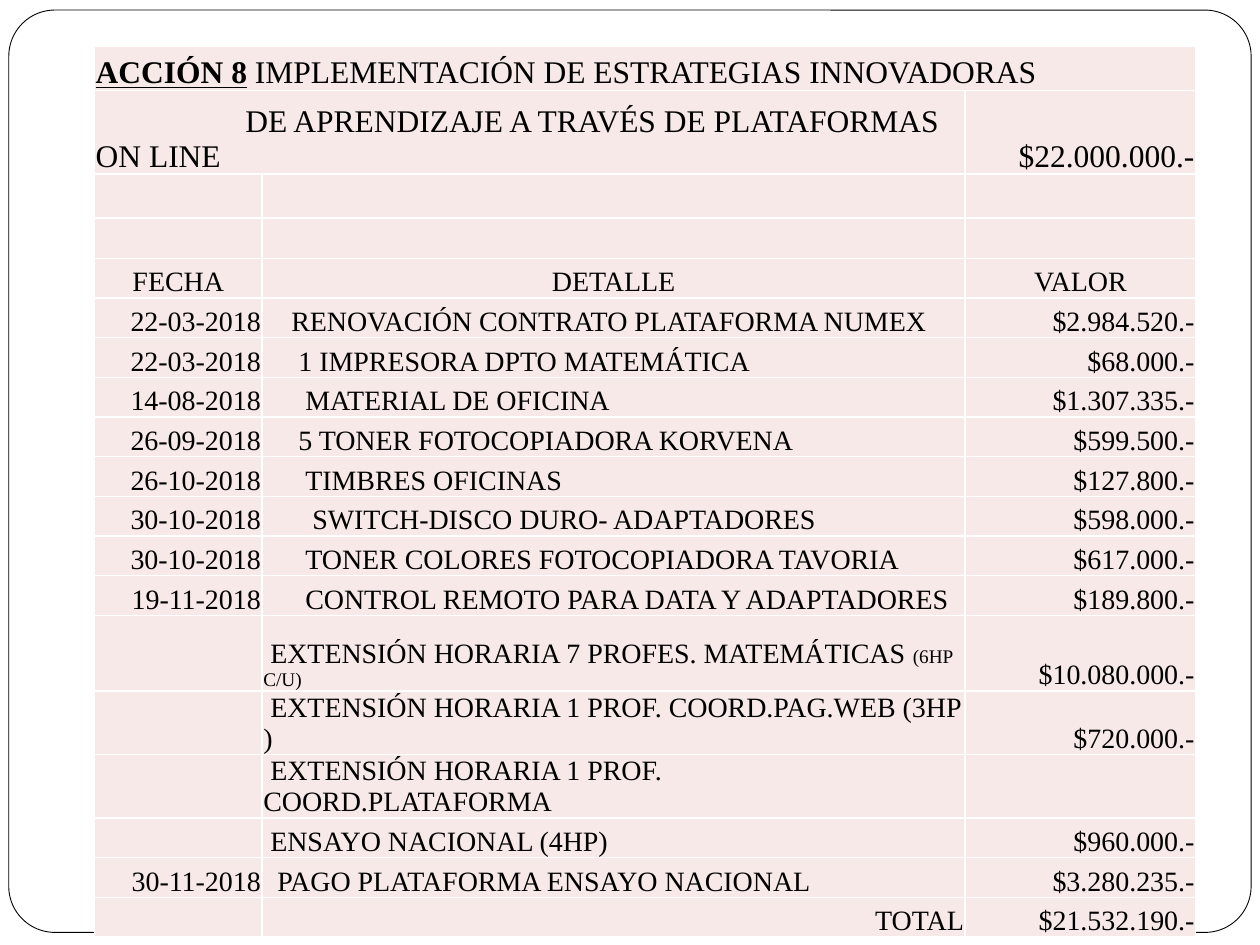
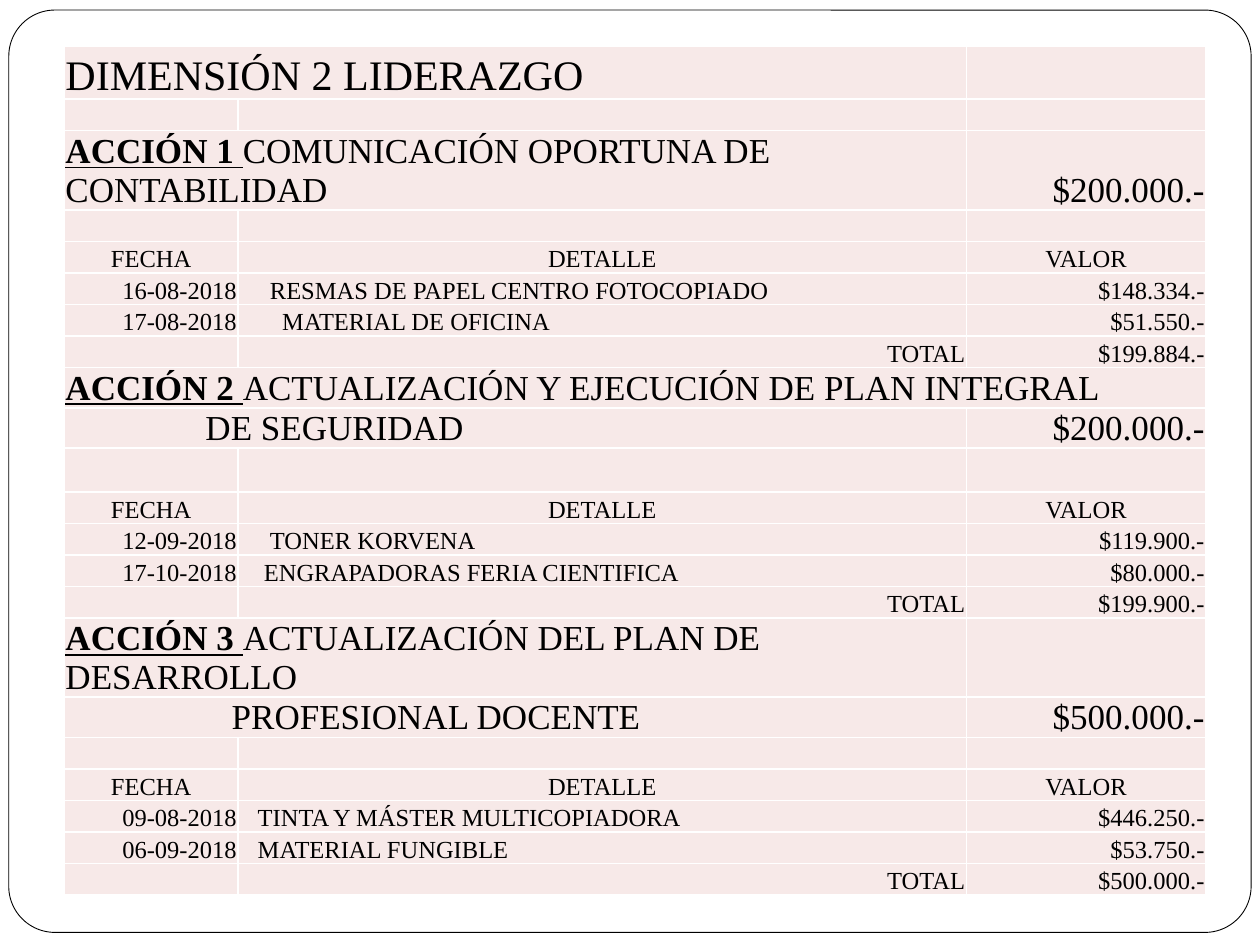
from lxml.etree import SubElement
from pptx import Presentation
from pptx.dml.color import RGBColor
from pptx.enum.shapes import MSO_SHAPE
from pptx.enum.text import MSO_ANCHOR, PP_ALIGN
from pptx.oxml.ns import qn
from pptx.util import Inches, Pt

COLORS = {"page": "FFFFFF", "cell": "F7E9E8", "ink": "000000", "grid": "FFFFFF"}
FONT = "Times New Roman"
ALIGN = {"l": PP_ALIGN.LEFT, "c": PP_ALIGN.CENTER, "r": PP_ALIGN.RIGHT}
CELL_FORMAT = {
    "margin_left": Inches(0.01),
    "margin_right": Inches(0.01),
    "margin_top": Inches(0.01),
    "margin_bottom": 0,
    "vertical_anchor": MSO_ANCHOR.BOTTOM,
}
ROW_KINDS = {
    "wide": {"aligns": "llr", "span": 3},
    "title": {"aligns": "llr", "span": 2},
    "head": {"aligns": "ccc", "span": 1},
    "item": {"aligns": "rlr", "span": 1},
    "total": {"aligns": "rrr", "span": 1},
}
ACTION_FORMAT = {"bold": True, "underline": True}
NOTE_FORMAT = {"size": Pt(11)}
HEAD = ("FECHA", "DETALLE", "VALOR")
BLANK = ("", "", "")


def rgb(name):
    return RGBColor.from_string(COLORS[name])


def write_cell(cell, text, size, align, lead, formats):
    for key, value in CELL_FORMAT.items():
        setattr(cell, key, value)
    cell.fill.solid()
    cell.fill.fore_color.rgb = rgb("cell")
    properties = cell._tc.get_or_add_tcPr()
    for place, side in enumerate(("lnL", "lnR", "lnT", "lnB")):
        border = properties.makeelement(qn(f"a:{side}"), {"w": str(Pt(1))})
        SubElement(SubElement(border, qn("a:solidFill")), qn("a:srgbClr"), val=COLORS["grid"])
        properties.insert(place, border)
    paragraph = cell.text_frame.paragraphs[0]
    paragraph.alignment = ALIGN[align]
    if lead:
        indent = paragraph._p.get_or_add_pPr()
        indent.set("marL", "0")
        indent.set("indent", str(Inches(lead * size / 288)))
    if not text:
        SubElement(paragraph._p, qn("a:endParaRPr"), sz=str(size * 100))
        return
    for part, extra in zip(text.split("|"), formats):
        for number, line in enumerate(part.split("\n")):
            if number:
                paragraph.add_line_break()
            run = paragraph.add_run()
            run.text = line
            run.font.color.rgb = rgb("ink")
            for key, value in {"name": FONT, "size": Pt(size), **extra}.items():
                setattr(run.font, key, value)


innovation_items = [
    (0.315, 4, "22-03-2018", "RENOVACIÓN CONTRATO PLATAFORMA NUMEX", "$2.984.520.-"),
    (0.315, 5, "22-03-2018", "1 IMPRESORA DPTO MATEMÁTICA", "$68.000.-"),
    (0.315, 6, "14-08-2018", "MATERIAL DE OFICINA", "$1.307.335.-"),
    (0.315, 5, "26-09-2018", "5 TONER FOTOCOPIADORA KORVENA", "$599.500.-"),
    (0.315, 6, "26-10-2018", "TIMBRES OFICINAS", "$127.800.-"),
    (0.315, 7, "30-10-2018", "SWITCH-DISCO DURO- ADAPTADORES", "$598.000.-"),
    (0.315, 6, "30-10-2018", "TONER COLORES FOTOCOPIADORA TAVORIA", "$617.000.-"),
    (0.315, 6, "19-11-2018", "CONTROL REMOTO PARA DATA Y ADAPTADORES", "$189.800.-"),
    (0.6, 1, "", "EXTENSIÓN HORARIA 7 PROFES. MATEMÁTICAS |(6HP C/U)", "$10.080.000.-"),
    (0.5, 1, "", "EXTENSIÓN HORARIA 1 PROF. COORD.PAG.WEB (3HP )", "$720.000.-"),
    (0.5, 1, "", "EXTENSIÓN HORARIA 1 PROF.\nCOORD.PLATAFORMA", ""),
    (0.315, 1, "", "ENSAYO NACIONAL (4HP)", "$960.000.-"),
    (0.315, 2, "30-11-2018", "PAGO PLATAFORMA ENSAYO NACIONAL", "$3.280.235.-"),
]
innovation = [
    ("wide", 0.35, 18, 0, ("ACCIÓN 8| IMPLEMENTACIÓN DE ESTRATEGIAS INNOVADORAS", "", "")),
    ("title", 0.66, 18, 19,
     ("DE APRENDIZAJE A TRAVÉS DE PLATAFORMAS ON LINE", "", "$22.000.000.-")),
    ("item", 0.35, 16, 0, BLANK),
    ("item", 0.32, 16, 0, BLANK),
    ("head", 0.315, 16, 0, HEAD),
]
for height, lead, *texts in innovation_items:
    innovation.append(("item", height, 16, lead, texts))
innovation.append(("total", 0.315, 16, 0, ("", "TOTAL", "$21.532.190.-")))

leadership_actions = [
    ([("title", 0.63, 20, 0,
       ("ACCIÓN 1 |COMUNICACIÓN OPORTUNA DE CONTABILIDAD", "", "$200.000.-"))],
     0.25,
     [(5, "16-08-2018", "RESMAS DE PAPEL CENTRO FOTOCOPIADO", "$148.334.-"),
      (7, "17-08-2018", "MATERIAL DE OFICINA", "$51.550.-")],
     "$199.884.-"),
    ([("wide", 0.32, 20, 0,
       ("ACCIÓN 2 |ACTUALIZACIÓN Y EJECUCIÓN DE PLAN INTEGRAL", "", "")),
      ("title", 0.32, 20, 16, ("DE SEGURIDAD", "", "$200.000.-"))],
     0.35,
     [(5, "12-09-2018", "TONER KORVENA", "$119.900.-"),
      (4, "17-10-2018", "ENGRAPADORAS FERIA CIENTIFICA", "$80.000.-")],
     "$199.900.-"),
    ([("title", 0.62, 20, 0, ("ACCIÓN 3 |ACTUALIZACIÓN DEL PLAN DE DESARROLLO", "", "")),
      ("title", 0.32, 20, 19, ("PROFESIONAL DOCENTE", "", "$500.000.-"))],
     0.25,
     [(3, "09-08-2018", "TINTA Y MÁSTER MULTICOPIADORA", "$446.250.-"),
      (3, "06-09-2018", "MATERIAL FUNGIBLE", "$53.750.-")],
     "$500.000.-"),
]
leadership = [
    ("title", 0.37, 24, 0, ("DIMENSIÓN 2 LIDERAZGO", "", "")),
    ("item", 0.25, 14, 0, BLANK),
]
for titles, gap, purchases, total in leadership_actions:
    leadership += titles
    leadership.append(("item", gap, 14, 0, BLANK))
    leadership.append(("head", 0.25, 14, 0, HEAD))
    for lead, *texts in purchases:
        leadership.append(("item", 0.25, 14, lead, texts))
    leadership.append(("total", 0.25, 14, 0, ("", "TOTAL", total)))

budgets = [
    (0.75, (1.33, 5.58, 1.83), innovation),
    (0.51, (1.38, 5.78, 1.9), leadership),
]

deck = Presentation()
deck.slide_width = Inches(10)
deck.slide_height = Inches(7.5)

for left, widths, rows in budgets:
    slide = deck.slides.add_slide(deck.slide_layouts[6])
    slide.background.fill.solid()
    slide.background.fill.fore_color.rgb = rgb("page")

    frame = slide.shapes.add_shape(
        MSO_SHAPE.ROUNDED_RECTANGLE, Inches(0.07), Inches(0.08), Inches(9.86), Inches(7.32))
    frame.adjustments[0] = 0.05
    frame.shadow.inherit = False
    frame.fill.solid()
    frame.fill.fore_color.rgb = rgb("page")
    frame.line.color.rgb = rgb("ink")
    frame.line.width = Pt(0.5)

    budget = slide.shapes.add_table(
        len(rows), len(widths), Inches(left), Inches(0.37),
        Inches(sum(widths)), Inches(sum(row[1] for row in rows))).table
    budget.first_row = False
    budget.horz_banding = False
    for column, width in zip(budget.columns, widths):
        column.width = Inches(width)

    for index, (kind, height, size, lead, texts) in enumerate(rows):
        budget.rows[index].height = Inches(height)
        span = ROW_KINDS[kind]["span"]
        lead_column = 0 if span > 1 else 1
        for column, text in enumerate(texts):
            formats = [{}, NOTE_FORMAT]
            if "|" in text and span > 1:
                formats = [ACTION_FORMAT, {}]
            write_cell(budget.cell(index, column), text, size,
                       ROW_KINDS[kind]["aligns"][column],
                       lead if column == lead_column else 0, formats)
        if span > 1:
            budget.cell(index, 0).merge(budget.cell(index, span - 1))

deck.save("out.pptx")
